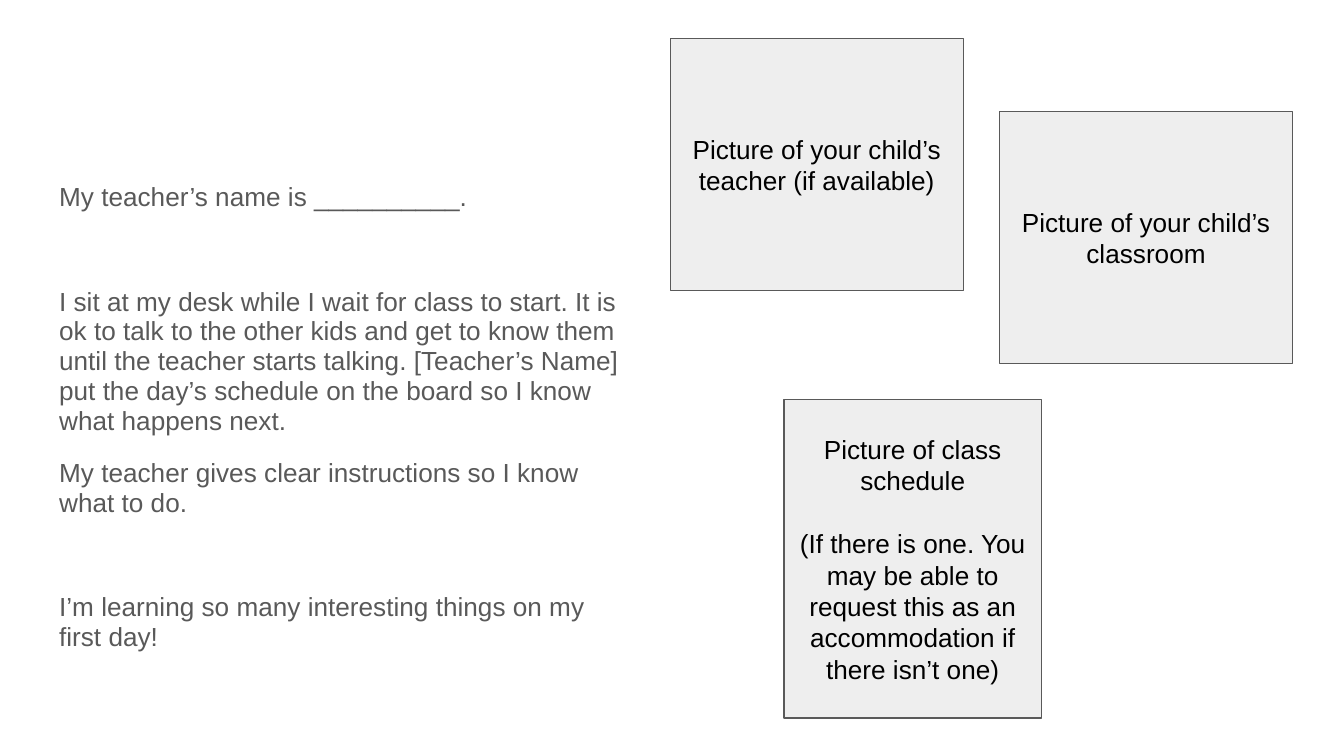
"""Build the first-day story slide about a child's teacher and classroom."""
from pptx import Presentation
from pptx.dml.color import RGBColor
from pptx.enum.shapes import MSO_SHAPE
from pptx.enum.text import MSO_ANCHOR, MSO_AUTO_SIZE, PP_ALIGN
from pptx.util import Pt
from lxml.etree import SubElement
from pptx.oxml.ns import qn

THEME = {
    "font": "Arial",
    "size": Pt(14),
    "story": RGBColor(0x59, 0x59, 0x59),
    "label": RGBColor(0x00, 0x00, 0x00),
    "fill": RGBColor(0xEE, 0xEE, 0xEE),
    "line": RGBColor(0x59, 0x59, 0x59),
    "background": RGBColor(0xFF, 0xFF, 0xFF),
}

PARAGRAPH_GAP, SECTION_GAP, LABEL_GAP = 12, 40, 16.8
STORY_AREA = (24.5, 90.7, 314.6, 269.3)
STORY = [
    ("My teacher’s name is __________.", 0),
    ("I sit at my desk while I wait for class to start. It is ok to talk to "
     "the other kids and get to know them until the teacher starts talking. "
     "[Teacher’s Name] put the day’s schedule on the board so I know what "
     "happens next.", SECTION_GAP),
    ("My teacher gives clear instructions so I know what to do.", PARAGRAPH_GAP),
    ("I’m learning so many interesting things on my first day!", SECTION_GAP),
]

PHOTO_SIZE = (157, 135.2)
SCHEDULE_SIZE = (138, 170.7)
FRAMES = [
    ((420, 214.1), SCHEDULE_SIZE,
     [("Picture of class schedule", 0),
      ("(If there is one. You may be able to request this as an "
       "accommodation if there isn’t one)", LABEL_GAP)]),
    ((535.5, 59.6), PHOTO_SIZE, [("Picture of your child’s classroom", 0)]),
    ((359.1, 20.6), PHOTO_SIZE,
     [("Picture of your child’s teacher (if available)", 0)]),
]


def write(box, paragraphs, color, align, anchor, spacing):
    """Fill a box with formatted paragraphs, each with its own space before."""
    frame = box.text_frame
    frame.text = "\n".join(text for text, _ in paragraphs)
    frame.word_wrap = True
    frame.auto_size = MSO_AUTO_SIZE.NONE
    frame.vertical_anchor = anchor
    frame.margin_left = frame.margin_right = Pt(7.2)
    frame.margin_top = frame.margin_bottom = Pt(7.2)
    for para, (_, gap) in zip(frame.paragraphs, paragraphs):
        para.alignment = align
        para.line_spacing = spacing
        para.space_before = Pt(gap)
        para.space_after = Pt(0)
        for span in para.runs:
            span.font.name = THEME["font"]
            span.font.size = THEME["size"]
            span.font.color.rgb = color


def add_story(page):
    """Place the story in the body placeholder without bullets."""
    body = page.placeholders[1]
    body.left, body.top, body.width, body.height = map(Pt, STORY_AREA)
    write(body, STORY, THEME["story"], PP_ALIGN.LEFT, MSO_ANCHOR.TOP, 0.95)
    for para in body.text_frame.paragraphs:
        properties = para._p.get_or_add_pPr()
        properties.set("marL", "0")
        properties.set("indent", "0")
        SubElement(properties, qn("a:buNone"))


def add_frame(page, position, size, label):
    """Draw one labelled picture frame."""
    box = page.shapes.add_shape(MSO_SHAPE.RECTANGLE, *map(Pt, position + size))
    box.shadow.inherit = False
    box.fill.solid()
    box.fill.fore_color.rgb = THEME["fill"]
    box.line.color.rgb = THEME["line"]
    box.line.width = Pt(0.75)
    write(box, label, THEME["label"], PP_ALIGN.CENTER, MSO_ANCHOR.MIDDLE, 1.0)


def main():
    """Assemble and save the deck."""
    deck = Presentation()
    deck.slide_width, deck.slide_height = Pt(720), Pt(405)
    page = deck.slides.add_slide(deck.slide_layouts[1])
    page.background.fill.solid()
    page.background.fill.fore_color.rgb = THEME["background"]
    title = page.shapes.title.element
    title.getparent().remove(title)
    add_story(page)
    for position, size, label in FRAMES:
        add_frame(page, position, size, label)
    deck.save("out.pptx")


if __name__ == "__main__":
    main()
